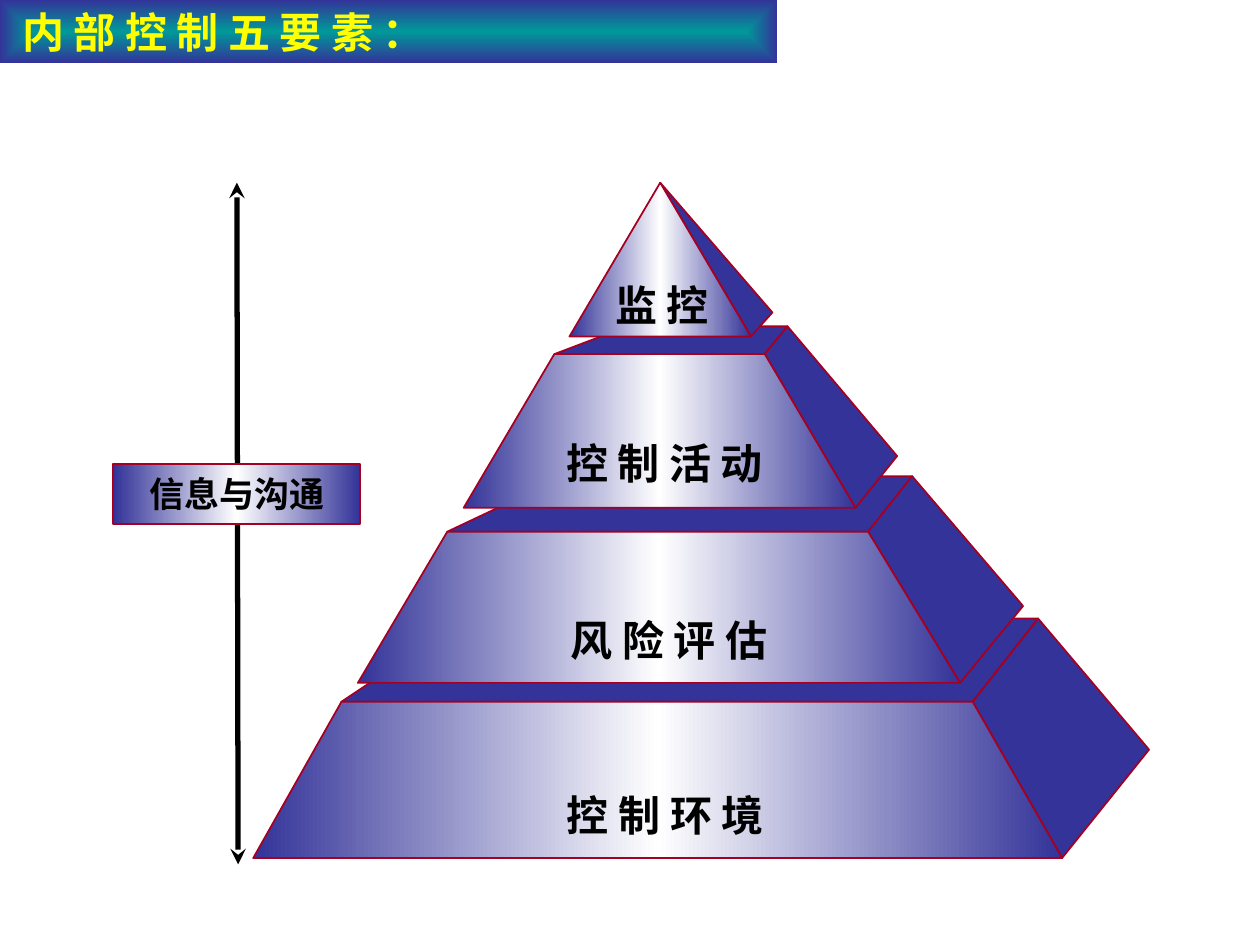
import pptx
import pptx.dml.color
import pptx.enum.shapes
import pptx.enum.text
import pptx.oxml
import pptx.oxml.ns
import pptx.util

# Grid of 100 columns by 75 rows; one cell is a tenth of an inch
CELL = pptx.util.Inches(0.1)
BLUE, WHITE, RED, BLACK = "333399", "FFFFFF", "A50021", "000000"
TEAL, YELLOW = "009999", "FFFF00"
CJK = "Noto Sans CJK SC"
SHEEN = [(0, BLUE), (50, WHITE), (100, BLUE)]
ACROSS = '<a:lin ang="0" scaled="1"/>'
FROM_CENTRE = ('<a:path path="shape"><a:fillToRect l="50000" t="50000" '
               'r="50000" b="50000"/></a:path>')

# Tiers from the base up: label, font, label box (left, top, width),
# front rows (top, bottom), front columns (bottom left, bottom right,
# top right, top left), back edge (left, right, row), far corner
TIERS = [
    ("控 制 环 境", CJK, (39.6, 62.2, 26.4), (55.7, 68.1),
     (20.1, 84.3, 77.2, 27.1), (37, 82.4, 49.1), (91.2, 59.5)),
    ("风 险 评 估", CJK, (41.7, 48.3, 22.8), (42.2, 54.2),
     (28.4, 76.2, 68.9, 35.5), (44.8, 72.4, 37.8), (81.2, 48.1)),
    ("控 制 活 动", "Arial", (42.5, 34.2, 20.5), (28.1, 40.3),
     (36.8, 67.9, 60.7, 44), (49.8, 62.5, 25.9), (71.2, 36.2)),
    ("监 控", "Arial", (45.8, 21.7, 13.5), (14.5, 26.7),
     (45.2, 59.6, 52.4, 52.4), (52.4, 52.4, 14.5), (61.3, 24.8)),
]


def cells(*counts):
    return [pptx.util.Emu(round(count * CELL)) for count in counts]


def colour(code):
    return pptx.dml.color.RGBColor.from_string(code)


def fill_gradient(shape, stops, direction):
    """Fill with (percent, colour) stops along the given direction."""
    shape.fill.gradient()
    old = shape._element.spPr.find(pptx.oxml.ns.qn("a:gradFill"))
    marks = "".join(
        f'<a:gs pos="{percent * 1000}"><a:srgbClr val="{code}"/></a:gs>'
        for percent, code in stops)
    new = pptx.oxml.parse_xml(
        f'<a:gradFill {pptx.oxml.ns.nsdecls("a")} rotWithShape="1">'
        f'<a:gsLst>{marks}</a:gsLst>{direction}</a:gradFill>')
    old.getparent().replace(old, new)


def outline(shape):
    shape.shadow.inherit = False
    shape.line.color.rgb = colour(RED)
    shape.line.width = pptx.util.Pt(1)


def write(shape, text, size, font, code, align, anchor):
    frame = shape.text_frame
    frame.word_wrap = True
    frame.auto_size = pptx.enum.text.MSO_AUTO_SIZE.NONE
    frame.vertical_anchor = anchor
    frame.margin_left = frame.margin_right = CELL
    frame.margin_top = frame.margin_bottom = CELL // 2
    para = frame.paragraphs[0]
    para.alignment = align
    para.line_spacing = 1.0
    span = para.add_run()
    span.text = text
    span.font.size = pptx.util.Pt(size)
    span.font.bold = True
    span.font.name = font
    span.font.color.rgb = colour(code)
    east = pptx.oxml.parse_xml(
        f'<a:ea {pptx.oxml.ns.nsdecls("a")} typeface="{CJK}"/>')
    span.font._element.find(pptx.oxml.ns.qn("a:latin")).addnext(east)


def add_face(page, corners):
    points = [cells(*corner) for corner in corners]
    builder = page.shapes.build_freeform(*points[0], scale=1.0)
    builder.add_line_segments(points[1:], close=True)
    face = builder.convert_to_shape()
    outline(face)
    face.fill.solid()
    face.fill.fore_color.rgb = colour(BLUE)
    return face


def add_tier(page, label, font, place, rows, columns, back, far):
    top, bottom = rows
    low_left, low_right, high_right, high_left = columns
    back_left, back_right, back_row = back
    front = [(low_left, bottom), (low_right, bottom), (high_right, top)]
    side = [(low_right, bottom), (high_right, top), far]
    # The tip has no top face, and its front and side are triangles
    if high_left != high_right:
        front.append((high_left, top))
        side.insert(2, (back_right, back_row))
        add_face(page, [(high_left, top), (high_right, top),
                        (back_right, back_row), (back_left, back_row)])
    add_face(page, side)
    fill_gradient(add_face(page, front), SHEEN, ACROSS)
    box = page.shapes.add_textbox(*cells(*place, 5))
    write(box, label, 24, font, BLACK, pptx.enum.text.PP_ALIGN.CENTER,
          pptx.enum.text.MSO_ANCHOR.TOP)


def add_arrow(page, start, end):
    arrow = page.shapes.add_connector(
        pptx.enum.shapes.MSO_CONNECTOR.STRAIGHT, *cells(*start, *end))
    arrow.line.color.rgb = colour(BLACK)
    arrow.line.width = pptx.util.Pt(3)
    names = pptx.oxml.ns.nsdecls("a")
    stroke = arrow.line._get_or_add_ln()
    for end_name in ("headEnd", "tailEnd"):
        stroke.append(pptx.oxml.parse_xml(
            f'<a:{end_name} {names} type="stealth"/>'))
    arrow._element.spPr.append(pptx.oxml.parse_xml(f"<a:effectLst {names}/>"))


def add_label(page, text, place):
    box = page.shapes.add_shape(
        pptx.enum.shapes.MSO_SHAPE.RECTANGLE, *cells(*place))
    outline(box)
    fill_gradient(box, SHEEN, ACROSS)
    write(box, text, 20, "Arial", BLACK, pptx.enum.text.PP_ALIGN.CENTER,
          pptx.enum.text.MSO_ANCHOR.MIDDLE)


def set_title(page, text, place):
    title = page.shapes.title
    title.left, title.top, title.width, title.height = cells(*place)
    fill_gradient(title, [(0, TEAL), (100, BLUE)], FROM_CENTRE)
    write(title, text, 24, CJK, YELLOW, pptx.enum.text.PP_ALIGN.LEFT,
          pptx.enum.text.MSO_ANCHOR.MIDDLE)


def main():
    deck = pptx.Presentation()
    deck.slide_width, deck.slide_height = cells(100, 75)
    page = deck.slides.add_slide(deck.slide_layouts.get_by_name("Title Only"))
    set_title(page, " 内 部 控 制 五 要 素 ：", (0, 0, 61.7, 5))
    # Communication runs beside every tier
    add_arrow(page, (18.8, 14.5), (18.9, 68.6))
    add_label(page, "信息与沟通", (9, 36.8, 19.6, 4.8))
    # Pyramid, base first so that each tier covers the one below
    for tier in TIERS:
        add_tier(page, *tier)
    deck.save("out.pptx")


if __name__ == "__main__":
    main()
